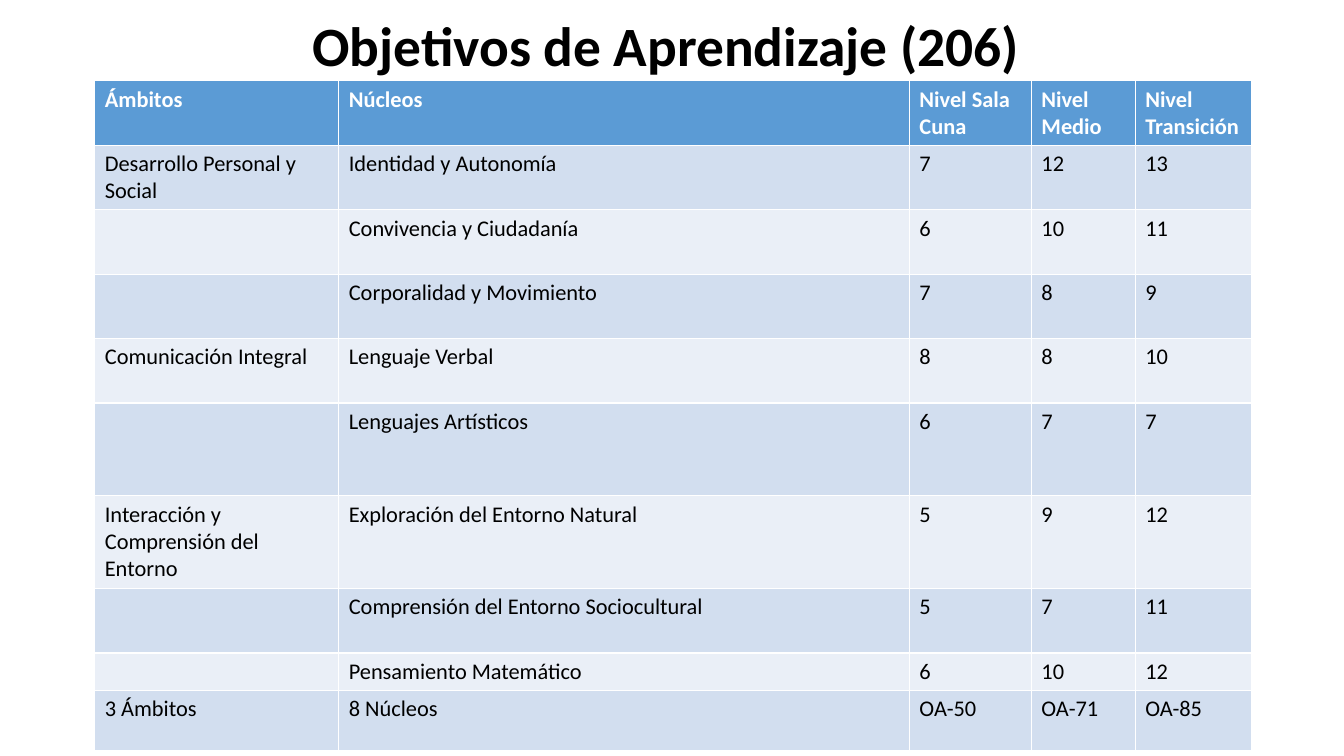
from pptx import Presentation
from pptx.dml.color import RGBColor
from pptx.enum.text import MSO_ANCHOR, PP_ALIGN
from pptx.util import Inches, Pt

MIDDLE = MSO_ANCHOR.MIDDLE
CENTER = PP_ALIGN.CENTER

HEAD = ["Ámbitos", "Núcleos", "Nivel Sala Cuna", "Nivel Medio", "Nivel Transición"]
BODY = [
    ["Desarrollo Personal y Social", "Identidad y Autonomía", 7, 12, 13],
    ["", "Convivencia y Ciudadanía", 6, 10, 11],
    ["", "Corporalidad y Movimiento", 7, 8, 9],
    ["Comunicación Integral", "Lenguaje Verbal", 8, 8, 10],
    ["", "Lenguajes Artísticos", 6, 7, 7],
    ["Interacción y Comprensión del Entorno", "Exploración del Entorno Natural", 5, 9, 12],
    ["", "Comprensión del Entorno Sociocultural", 5, 7, 11],
    ["", "Pensamiento Matemático", 6, 10, 12],
    ["3 Ámbitos", "8 Núcleos", "OA-50", "OA-71", "OA-85"],
]
WIDTHS = [2.42, 5.66, 1.21, 1.03, 1.15]
HEIGHTS = [0.64] * 5 + [0.92, 0.92, 0.64, 0.37, 0.6]


def color(code):
    return RGBColor.from_string(code)


class Deck:
    face = "Calibri"
    ink = "000000"
    paper = "FFFFFF"
    accent = "5B9BD5"
    bands = ["D2DEEF", "EAEFF7"]

    def __init__(self, slide):
        self.slide = slide

    def style(self, para, size, tint, bold):
        font = para.font
        font.name, font.size, font.bold = self.face, Pt(size), bold
        font.color.rgb = color(tint)

    def title(self, text, left, top, width, height):
        box = self.slide.shapes.add_textbox(
            Inches(left), Inches(top), Inches(width), Inches(height))
        frame = box.text_frame
        frame.word_wrap = True
        frame.vertical_anchor = MIDDLE
        para = frame.paragraphs[0]
        para.text = text
        para.alignment = CENTER
        para.line_spacing = 0.9
        self.style(para, 39.6, self.ink, True)

    def table(self, rows, left, top, widths, heights):
        table = self.slide.shapes.add_table(
            len(rows), len(widths), Inches(left), Inches(top),
            Inches(sum(widths)), Inches(sum(heights))).table
        for column, width in zip(table.columns, widths):
            column.width = Inches(width)
        for i, (row, values, height) in enumerate(zip(table.rows, rows, heights)):
            row.height = Inches(height)
            head = i == 0
            fill = self.accent if head else self.bands[(i - 1) % 2]
            for cell, value in zip(row.cells, values):
                cell.fill.solid()
                cell.fill.fore_color.rgb = color(fill)
                para = cell.text_frame.paragraphs[0]
                if value != "":
                    para.text = str(value)
                self.style(para, 16, self.paper if head else self.ink, head)


def main():
    show = Presentation()
    show.slide_width, show.slide_height = Inches(13.33), Inches(7.5)
    deck = Deck(show.slides.add_slide(show.slide_layouts[6]))
    deck.title("Objetivos de Aprendizaje (206) ", 0.92, 0.17, 11.5, 0.63)
    deck.table([HEAD] + BODY, 0.94, 0.8, WIDTHS, HEIGHTS)
    show.save("out.pptx")


if __name__ == "__main__":
    main()
